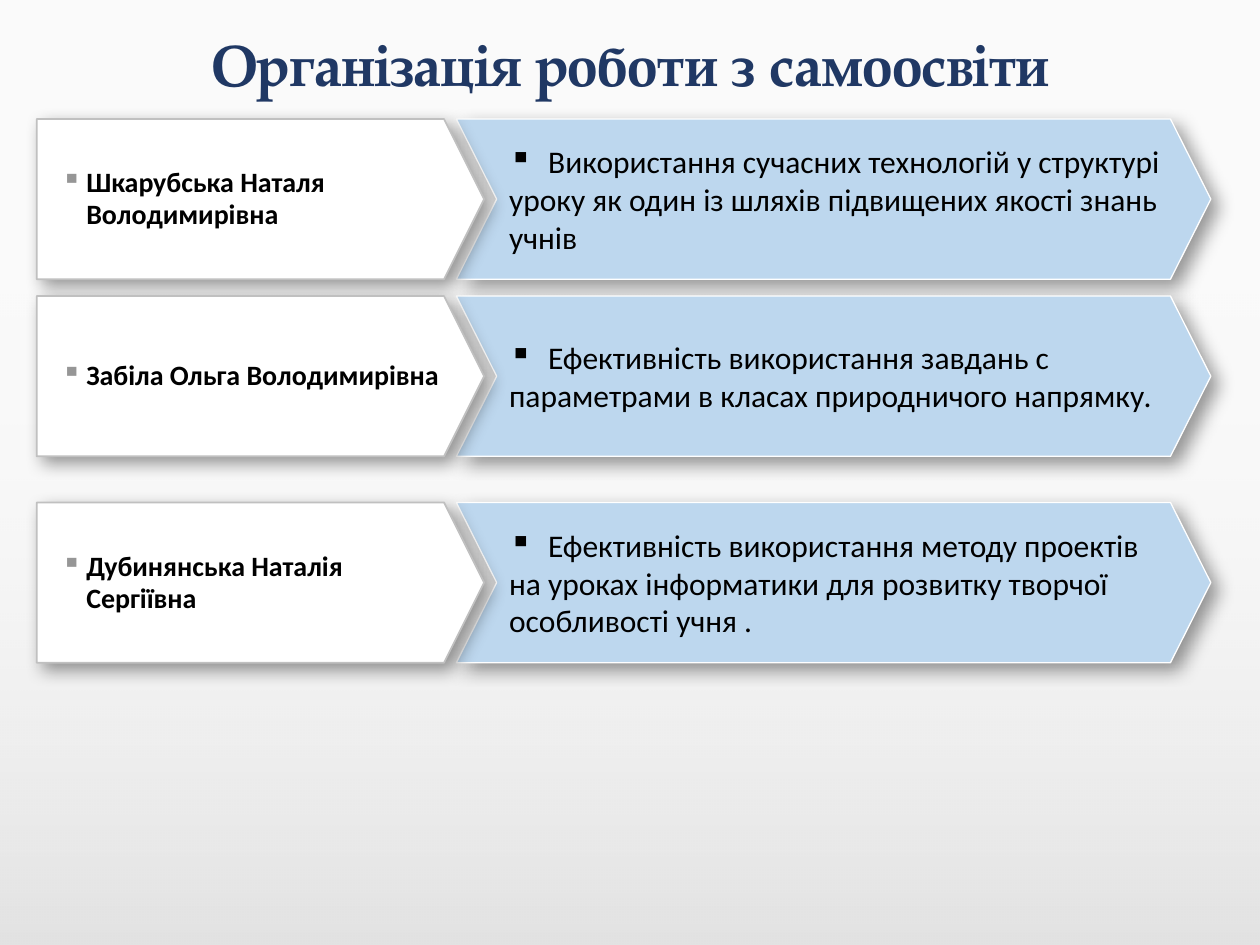
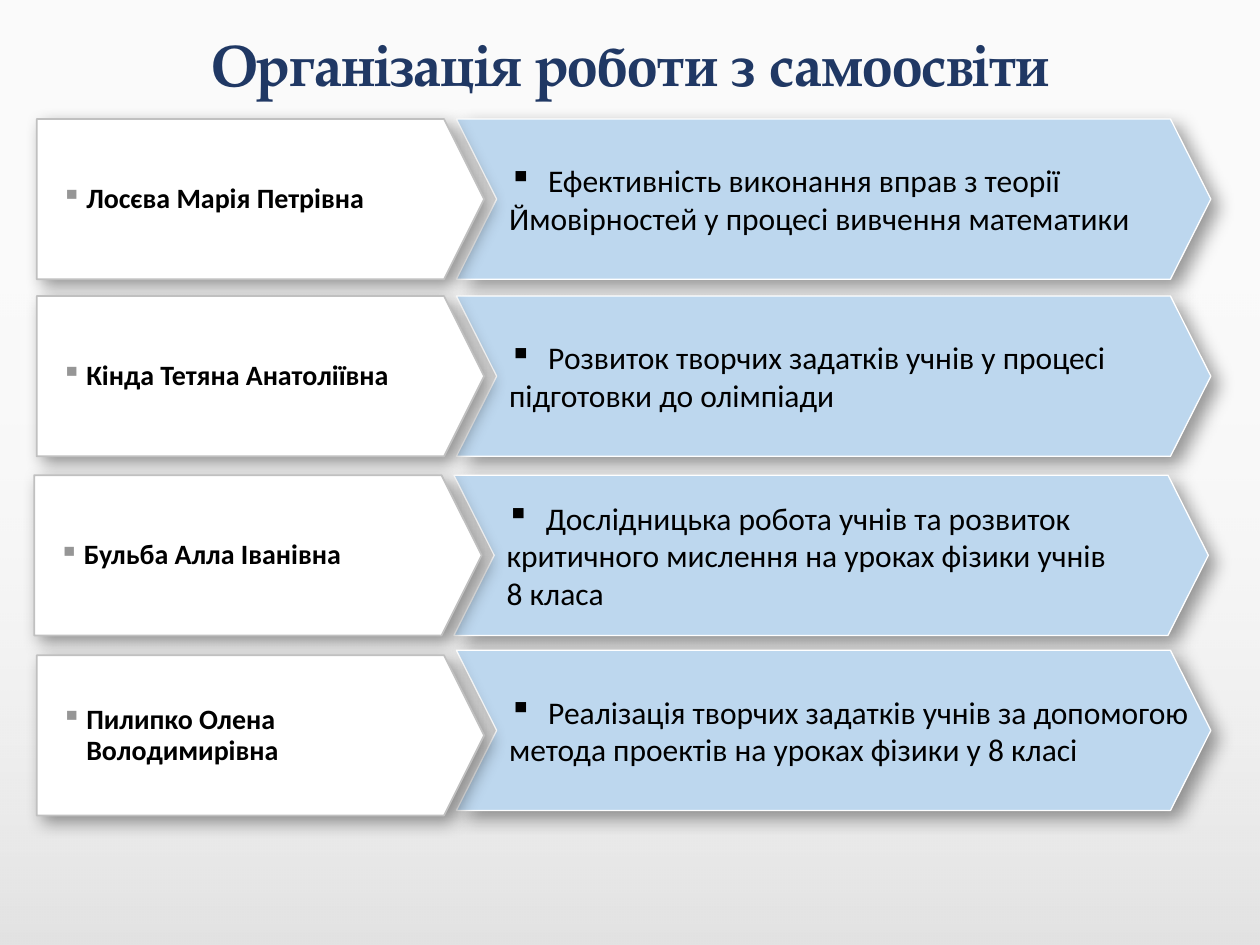
from lxml import etree
from pptx import Presentation
from pptx.dml.color import RGBColor
from pptx.enum import shapes, text
from pptx.oxml import parse_xml
from pptx.oxml.ns import nsdecls, qn
from pptx.util import Cm, Pt

HEX = dict(back="FAFAFA", title="203864", ink="000000", plate="FFFFFF",
           rim="C0C0C0", topic="BDD7EE", edge="FFFFFF", mark="969696")
TITLE = "Організація роботи з самоосвіти"
HIGH, LEFT = 3.23, 0.74

# Each row: left, top, drop of the name plate, name, topic lines
FIRST = [
    (LEFT, 2.4, 0, "Шкарубська Наталя Володимирівна",
     ["Використання сучасних технологій у структурі",
      "уроку як один із шляхів підвищених якості знань", "учнів"]),
    (LEFT, 5.97, 0, "Забіла Ольга Володимирівна",
     ["Ефективність використання завдань с",
      "параметрами в класах природничого напрямку."]),
    (LEFT, 10.13, 0, "Дубинянська Наталія Сергіївна",
     ["Ефективність використання методу проектів",
      "на уроках інформатики для розвитку творчої", "особливості учня ."]),
]
SECOND = [
    (LEFT, 2.4, 0, "Лосєва Марія Петрівна",
     ["Ефективність виконання вправ з теорії",
      "Ймовірностей у процесі вивчення математики"]),
    (LEFT, 5.97, 0, "Кінда Тетяна Анатоліївна",
     ["Розвиток творчих задатків учнів у процесі",
      "підготовки до олімпіади"]),
    (0.69, 9.58, 0, "Бульба Алла Іванівна",
     ["Дослідницька робота учнів та розвиток",
      "критичного мислення на уроках фізики учнів", "8 класа"]),
    (LEFT, 13.11, 0.1, "Пилипко Олена Володимирівна",
     ["Реалізація творчих задатків учнів за допомогою",
      "метода проектів на уроках фізики у 8 класі"]),
]


def color(key):
    return RGBColor.from_string(HEX[key])


def bullet(par, hang, tint, sign):
    """Set a hanging indent, and a square mark if asked for."""
    props = par._p.get_or_add_pPr()
    props.set("marL", str(Cm(hang)))
    props.set("indent", str(-Cm(hang)))
    if sign:
        tone = etree.SubElement(props, qn("a:buClr"))
        etree.SubElement(tone, qn("a:srgbClr"), val=HEX[tint])
        etree.SubElement(props, qn("a:buChar"), char="▪")
    else:
        etree.SubElement(props, qn("a:buNone"))


def write(frame, lines, size, font="Calibri", tint="ink", bold=False,
          align=text.PP_ALIGN.LEFT, hang=None, mark="ink", wrap=True,
          lead=None, after=None):
    frame.word_wrap = wrap
    frame.vertical_anchor = text.MSO_ANCHOR.MIDDLE
    for i, line in enumerate(lines):
        par = frame.paragraphs[0] if i == 0 else frame.add_paragraph()
        if hang:
            bullet(par, hang, mark, i == 0)
        par.alignment = align
        par.line_spacing = lead
        par.space_after = after
        run = par.add_run()
        run.text = line
        run.font.size, run.font.name, run.font.bold = Pt(size), font, bold
        run.font.color.rgb = color(tint)


def arrow(slide, kind, box, adj, fill, line, width):
    """Add a pointed block with a soft shadow at the lower right."""
    shape = slide.shapes.add_shape(kind, *map(Cm, box))
    shape.adjustments[0] = adj
    shape.fill.solid()
    shape.fill.fore_color.rgb = color(fill)
    shape.line.color.rgb = color(line)
    shape.line.width = Pt(width)
    shape.shadow.inherit = False
    glow = shape._element.spPr.find(qn("a:effectLst"))
    cast = etree.SubElement(glow, qn("a:outerShdw"), blurRad=str(Pt(10)),
                            dist=str(Pt(5)), dir="2700000", algn="tl",
                            rotWithShape="0")
    tone = etree.SubElement(cast, qn("a:srgbClr"), val=HEX["ink"])
    etree.SubElement(tone, qn("a:alpha"), val="40000")
    return shape


def row(slide, left, top, drop, name, lines):
    # Topic
    topic = arrow(slide, shapes.MSO_SHAPE.CHEVRON,
                  (left + 8.46, top, 15.21, HIGH), 0.252, "topic", "edge", 0.75)
    write(topic.text_frame, lines, 18, hang=0.79, wrap=False)
    # Name plate
    plate = arrow(slide, shapes.MSO_SHAPE.PENTAGON,
                  (left, top + drop, 9.02, HIGH), 0.25, "plate", "rim", 1)
    frame = plate.text_frame
    frame.margin_left, frame.margin_right = Cm(0.5), Cm(0.4)
    frame.margin_top = frame.margin_bottom = 0
    write(frame, [name], 16, bold=True, hang=0.5, mark="mark",
          lead=0.95, after=Pt(8))


def shade(slide):
    """Darken the page gently towards its foot, behind all else."""
    veil = slide.shapes.add_shape(shapes.MSO_SHAPE.RECTANGLE, 0, Cm(5.61),
                                  Cm(25.4), Cm(13.44))
    veil.line.fill.background()
    veil.shadow.inherit = False
    grad = parse_xml(
        f'<a:gradFill {nsdecls("a")} rotWithShape="1"><a:gsLst>'
        '<a:gs pos="0"><a:srgbClr val="000000"><a:alpha val="10000"/></a:srgbClr></a:gs>'
        '<a:gs pos="100000"><a:srgbClr val="FFFFFF"><a:alpha val="0"/></a:srgbClr></a:gs>'
        '</a:gsLst><a:lin ang="16200000" scaled="0"/></a:gradFill>')
    veil._element.spPr.find(qn("a:prstGeom")).addnext(grad)
    slide.shapes._spTree.insert(2, veil._element)


def page(deck, rows):
    slide = deck.slides.add_slide(deck.slide_layouts[5])
    slide.background.fill.solid()
    slide.background.fill.fore_color.rgb = color("back")
    shade(slide)
    # Title
    head = slide.shapes.title
    head.left, head.top, head.width, head.height = map(
        Cm, (0.91, 0.43, 23.6, 1.7))
    head.text_frame.auto_size = text.MSO_AUTO_SIZE.NONE
    write(head.text_frame, [TITLE], 33, font="TeX Gyre Pagella", tint="title",
          bold=True, align=text.PP_ALIGN.CENTER)
    # Teachers and their topics
    for item in rows:
        row(slide, *item)


def main():
    deck = Presentation()
    deck.slide_width, deck.slide_height = Cm(25.4), Cm(19.05)
    for rows in (FIRST, SECOND):
        page(deck, rows)
    deck.save("out.pptx")


if __name__ == "__main__":
    main()
